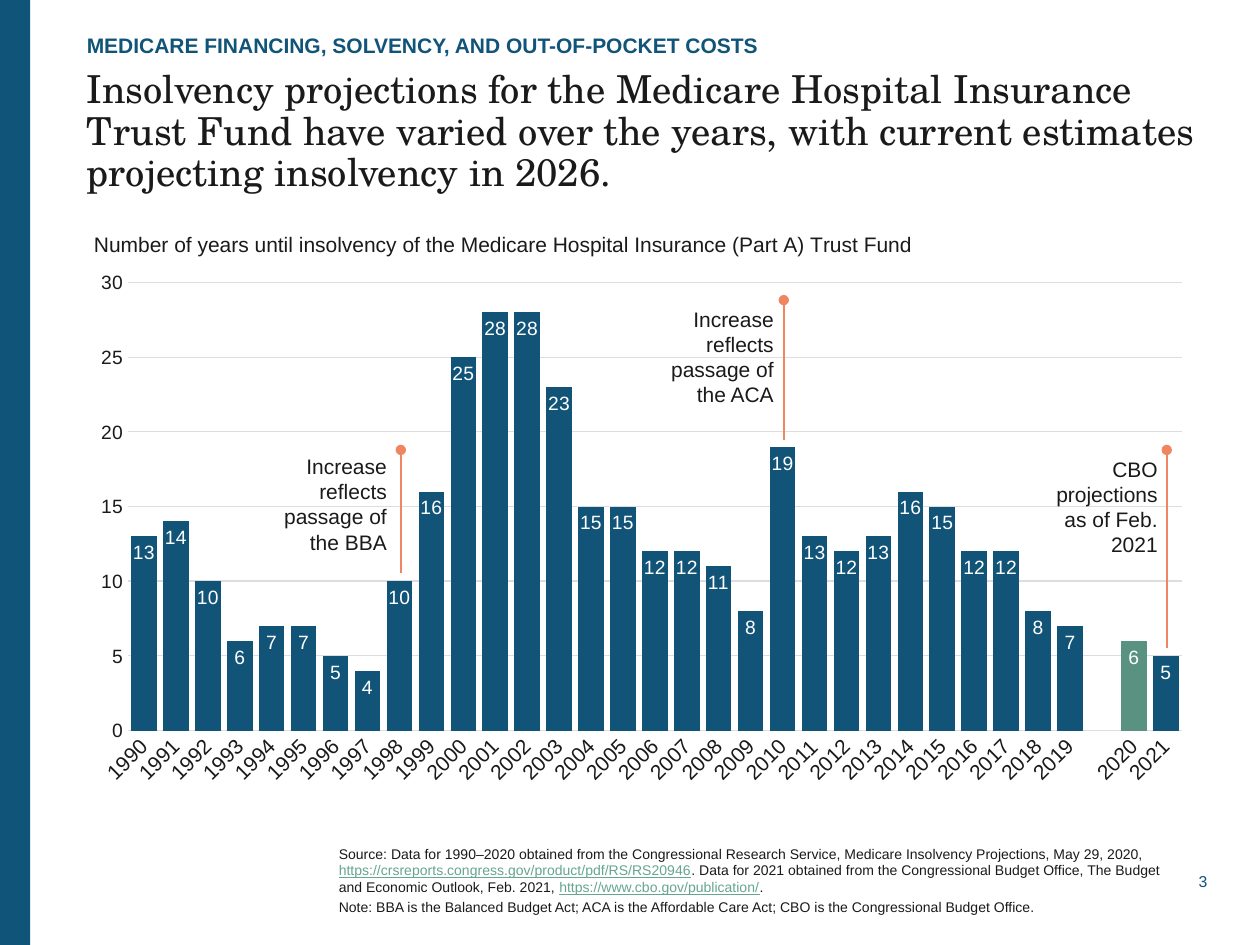
from lxml.etree import SubElement
from pptx import Presentation
from pptx.chart.data import CategoryChartData
from pptx.dml.color import RGBColor
from pptx.enum.chart import XL_CHART_TYPE as ChartType, XL_LABEL_POSITION as LabelPosition
from pptx.enum.chart import XL_TICK_MARK as TickMark
from pptx.enum.shapes import MSO_CONNECTOR as Connector, MSO_SHAPE as Shape
from pptx.enum.text import MSO_ANCHOR as Anchor, MSO_AUTO_SIZE as AutoSize, PP_ALIGN as Align
from pptx.oxml import parse_xml
from pptx.oxml.ns import nsdecls, qn
from pptx.util import Cm, Pt

COLORS = {
    "blue": "115479", "bar": "125478", "green": "599280", "link": "65A591",
    "ink": "1A1A1A", "grid": "DDDDDD", "accent": "F08661", "white": "FFFFFF",
}
SANS, SERIF = "Arial", "TeX Gyre Schola"

YEARS = [str(year) for year in range(1990, 2020)] + ["", "2020", "2021"]
YEARS_LEFT = [13, 14, 10, 6, 7, 7, 5, 4, 10, 16, 25, 28, 28, 23, 15, 15, 12, 12, 11, 8,
              19, 13, 12, 13, 16, 15, 12, 12, 8, 7, None, 6, 5]
CHART_TITLE = "Number of years until insolvency of the Medicare Hospital Insurance (Part A) Trust Fund"

SOURCE = [
    ("Source: Data for 1990–2020 obtained from the Congressional Research Service, "
     "Medicare Insolvency Projections, May 29, 2020, ", False),
    ("https://crsreports.congress.gov/product/pdf/RS/RS20946", True),
    (". Data for 2021 obtained from the Congressional Budget Office, "
     "The Budget and Economic Outlook, Feb. 2021, ", False),
    ("https://www.cbo.gov/publication/", True),
    (".", False),
]
NOTE = [("Note: BBA is the Balanced Budget Act; ACA is the Affordable Care Act; "
         "CBO is the Congressional Budget Office.", False)]

# text, label box (left, top, width), stem (x, top, bottom), all in cm
CALLOUTS = [
    ("Increase reflects passage of the BBA", (4.8, 9.02, 3.25), (8.08, 9.07, 11.56)),
    ("Increase reflects passage of the ACA", (12.6, 6.05, 3.25), (15.8, 6.05, 8.86)),
    ("CBO projections as of Feb. 2021", (20.57, 9.07, 3.02), (23.52, 9.07, 13.06)),
]


def rgb(name):
    return RGBColor.from_string(COLORS[name])


def apply(target, values):
    for name, value in values.items():
        setattr(target, name, value)


def set_font(font, size, color="ink", name=SANS, **values):
    apply(font, {"size": Pt(size), "name": name, "bold": False, **values})
    font.color.rgb = rgb(color)


def set_layout(parent, index, inner=False, **fractions):
    """Place a chart part by fractions of the chart's area."""
    old = parent.find(qn("c:layout"))
    if old is not None:
        parent.remove(old)
    layout = parse_xml(f"<c:layout {nsdecls('c')}><c:manualLayout/></c:layout>")
    manual = layout[0]
    if inner:
        SubElement(manual, qn("c:layoutTarget")).set("val", "inner")
    for key in ("x", "y"):
        SubElement(manual, qn(f"c:{key}Mode")).set("val", "edge")
    for key, value in fractions.items():
        SubElement(manual, qn(f"c:{key}")).set("val", str(value))
    parent.insert(index, layout)


class SlideBuilder:
    def __init__(self, slide):
        self.slide = slide

    def side_band(self, *box):
        band = self.slide.shapes.add_shape(Shape.RECTANGLE, *map(Cm, box))
        band.shadow.inherit = False
        band.fill.solid()
        band.fill.fore_color.rgb = rgb("blue")
        band.line.fill.background()

    def title(self, text, box):
        title = self.slide.shapes.title
        apply(title, dict(zip(("left", "top", "width", "height"), map(Cm, box))))
        self.frame(title.text_frame, Anchor.TOP)
        title.text_frame.text = text
        paragraph = title.text_frame.paragraphs[0]
        apply(paragraph, {"alignment": Align.LEFT, "line_spacing": 0.9})
        set_font(paragraph.font, 22, name=SERIF)

    def frame(self, frame, anchor, wrap=True):
        """Fixed-size text frame without insets."""
        apply(frame, {"margin_left": 0, "margin_right": 0, "margin_top": 0, "margin_bottom": 0,
                      "word_wrap": wrap, "vertical_anchor": anchor, "auto_size": AutoSize.NONE})

    def text(self, text, box, size, anchor, color="ink", align=Align.LEFT, wrap=True, **font):
        frame = self.slide.shapes.add_textbox(*map(Cm, box)).text_frame
        self.frame(frame, anchor, wrap)
        frame.text = text
        frame.paragraphs[0].alignment = align
        set_font(frame.paragraphs[0].font, size, color, **font)

    def footnotes(self, notes, box):
        frame = self.slide.shapes.add_textbox(*map(Cm, box)).text_frame
        self.frame(frame, Anchor.MIDDLE)
        for index, pieces in enumerate(notes):
            paragraph = frame.add_paragraph() if index else frame.paragraphs[0]
            if index:
                paragraph.space_before = Pt(1.6)
            for text, is_address in pieces:
                run = paragraph.add_run()
                run.text = text
                set_font(run.font, 8, "link" if is_address else "ink", underline=is_address)

    def callout(self, text, label, stem):
        frame = self.slide.shapes.add_textbox(*map(Cm, (*label, 2.31))).text_frame
        apply(frame, {"word_wrap": True, "auto_size": AutoSize.SHAPE_TO_FIT_TEXT})
        frame.text = text
        frame.paragraphs[0].alignment = Align.RIGHT
        set_font(frame.paragraphs[0].font, 12)
        x, top, bottom = map(Cm, stem)
        line = self.slide.shapes.add_connector(Connector.STRAIGHT, x, top, x, bottom)
        line.line.color.rgb = rgb("accent")
        line.line.width = Pt(1.25)
        SubElement(line.line._ln, qn("a:headEnd")).set("type", "oval")
        SubElement(line._element.spPr, qn("a:effectLst"))

    def chart(self, box):
        data = CategoryChartData()
        data.categories = YEARS
        data.add_series("Series 1", YEARS_LEFT)
        chart = self.slide.shapes.add_chart(
            ChartType.COLUMN_CLUSTERED, *map(Cm, box), data).chart
        chart.has_legend = False
        set_font(chart.font, 10)

        chart.has_title = True
        title = chart.chart_title
        title.text_frame.text = CHART_TITLE
        set_font(title.text_frame.paragraphs[0].runs[0].font, 12)
        set_layout(title._element, 1, x=0.003, y=0.012)
        set_layout(chart._chartSpace.chart.plotArea, 0, inner=True,
                   x=0.037, y=0.101, w=0.945, h=0.732)
        self.axes(chart)

        plot = chart.plots[0]
        apply(plot, {"gap_width": 25, "overlap": -27, "vary_by_categories": False,
                     "has_data_labels": True})
        apply(plot.data_labels, {"show_value": True, "position": LabelPosition.INSIDE_END})
        set_font(plot.data_labels.font, 11, "white")
        bars = plot.series[0]
        estimate = bars.points[YEARS.index("2020")]
        for part, color in ((bars, "bar"), (estimate, "green")):
            part.format.fill.solid()
            part.format.fill.fore_color.rgb = rgb(color)

    def axes(self, chart):
        years, values = chart.category_axis, chart.value_axis
        for axis, size in ((years, 12), (values, 11)):
            apply(axis, {"major_tick_mark": TickMark.NONE, "minor_tick_mark": TickMark.NONE})
            set_font(axis.tick_labels.font, size)
        apply(values, {"minimum_scale": 0, "maximum_scale": 30, "major_unit": 5})
        values.format.line.fill.background()
        for line in (years.format.line, values.major_gridlines.format.line):
            line.color.rgb = rgb("grid")
            line.width = Pt(0.75)
        years._element.find(qn("c:txPr")).find(qn("a:bodyPr")).set("rot", "-2700000")


def main():
    presentation = Presentation()
    presentation.slide_width, presentation.slide_height = Cm(25.4), Cm(19.05)
    title_only = presentation.slide_layouts[5]
    builder = SlideBuilder(presentation.slides.add_slide(title_only))

    builder.side_band(0, 0, 0.61, 19.05)
    builder.text("3", (23.55, 17.48, 0.79, 0.56), 9, Anchor.MIDDLE, "blue", Align.RIGHT, wrap=False)
    builder.footnotes([SOURCE, NOTE], (6.83, 16.66, 16.74, 2.16))
    builder.title("Insolvency projections for the Medicare Hospital Insurance Trust Fund have varied "
                  "over the years, with current estimates projecting insolvency in 2026.",
                  (1.75, 1.42, 22.86, 2.03))
    builder.text("MEDICARE FINANCING, SOLVENCY, AND OUT-OF-POCKET COSTS",
                 (1.75, 0.48, 22, 0.69), 12, Anchor.BOTTOM, "blue", bold=True)
    builder.chart((1.75, 4.45, 22.48, 12.34))
    for callout in CALLOUTS:
        builder.callout(*callout)
    presentation.save("out.pptx")


if __name__ == "__main__":
    main()
